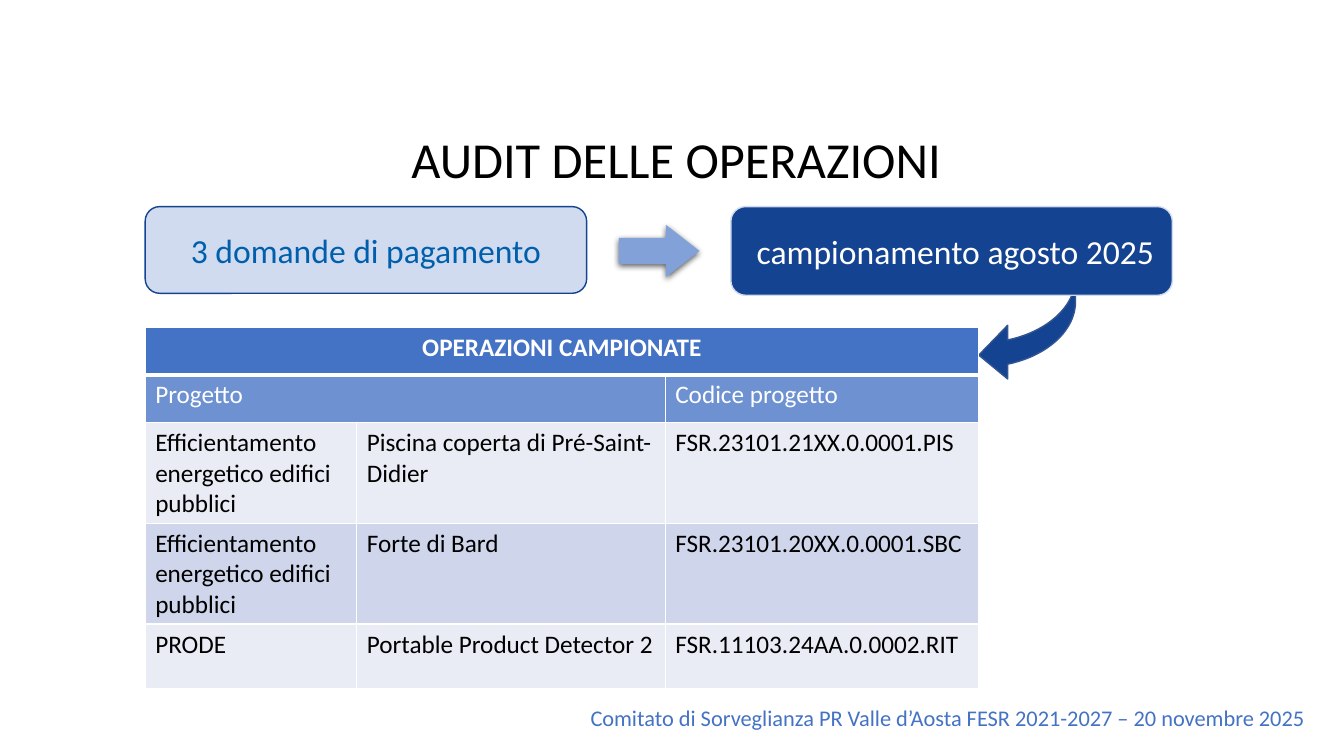
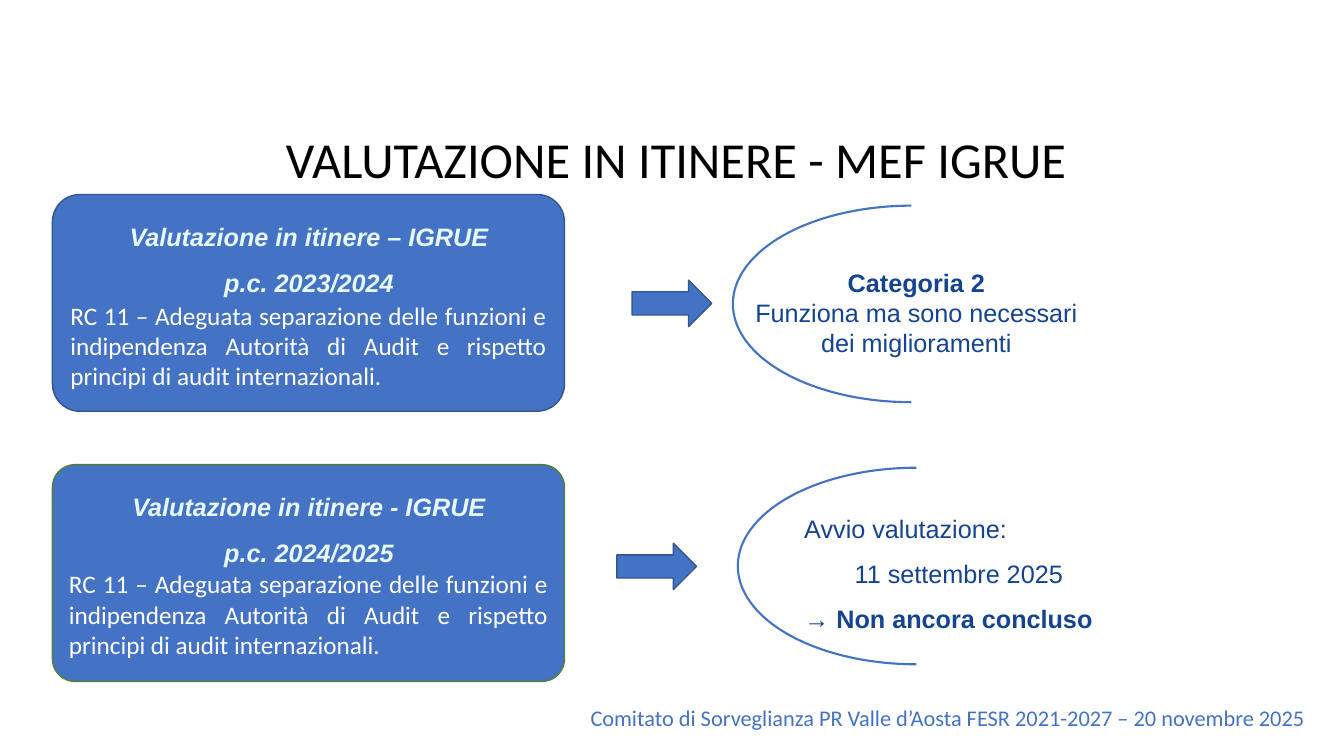
from dataclasses import dataclass

from lxml import etree
from pptx import Presentation
from pptx.dml.color import RGBColor
from pptx.enum.shapes import MSO_SHAPE
from pptx.enum.text import MSO_ANCHOR, PP_ALIGN
from pptx.oxml.ns import qn
from pptx.util import Emu, Inches, Pt

ROUNDED = MSO_SHAPE.ROUNDED_RECTANGLE
RIGHT_ARROW = MSO_SHAPE.RIGHT_ARROW
CURVED_ARROW = MSO_SHAPE.CURVED_LEFT_ARROW
BRACKET = MSO_SHAPE.LEFT_BRACKET
TOP, MIDDLE = MSO_ANCHOR.TOP, MSO_ANCHOR.MIDDLE
LEFT, CENTER, JUSTIFY = PP_ALIGN.LEFT, PP_ALIGN.CENTER, PP_ALIGN.JUSTIFY

WIDTH, HEIGHT = Inches(13.333), Inches(7.5)
COLORS = {
    "blue": "4472C4", "navy": "144391", "outline": "325491", "pale": "D0DBF0",
    "sky": "82A1D8", "link": "005FAC", "ice": "E8F9FE", "green": "538035",
    "subhead": "6D91D1", "band_light": "E9EBF5", "band_dark": "CFD5EA",
    "white": "FFFFFF", "black": "000000",
}
FOOTER = "Comitato di Sorveglianza PR Valle d’Aosta FESR 2021-2027 – 20 novembre 2025"
REQUIREMENT = ("RC 11 – Adeguata separazione delle funzioni e indipendenza Autorità di Audit "
               "e rispetto principi di audit internazionali.")


@dataclass(frozen=True)
class Box:
    """Left and width in percent of slide width, top and height of slide height."""
    left: float
    top: float
    width: float
    height: float

    def emu(self) -> tuple:
        return (share(self.left, WIDTH), share(self.top, HEIGHT),
                share(self.width, WIDTH), share(self.height, HEIGHT))


@dataclass(frozen=True)
class Style:
    size: int = 18
    color: str = "white"
    font: str = "Calibri"
    bold: bool = False
    italic: bool = False


@dataclass(frozen=True)
class Line:
    text: str
    bold: bool = False
    bold_tail: str = ""
    align: PP_ALIGN = CENTER
    spacing: float = 1.0


@dataclass(frozen=True)
class Evaluation:
    top: float
    corner: float
    outline: str
    heading: tuple
    arrow: tuple
    bracket: tuple
    outcome_box: Box
    outcome: list


TITLE_BOX = Box(7.8, 16.27, 85.05, 9.47)
FOOTER_BOX = Box(43.2, 92.53, 55.35, 4.93)
TITLE_STYLE = Style(36, "black")
FOOTER_STYLE = Style(16, "blue")
STEP_TOP, STEP_WIDTH = 27.33, 32.85
HEADING_STYLE = Style(font="Arial", color="ice", bold=True, italic=True)
OUTCOME_STYLE = Style(font="Arial", color="navy")

TABLE_BOX = Box(10.8, 43.33, 62.03, 42.93)
COLUMNS = (15.75, 22.95, 23.33)
ROWS = (6.27, 6.27, 10.93, 10.93, 8.53)
ROW_FILLS = ("blue", "subhead", "band_light", "band_dark", "band_light")
PROJECTS = (
    ("OPERAZIONI CAMPIONATE", "", ""),
    ("Progetto", "", "Codice progetto"),
    ("Efficientamento energetico edifici pubblici", "Piscina coperta di Pré-Saint-Didier",
     "FSR.23101.21XX.0.0001.PIS"),
    ("Efficientamento energetico edifici pubblici", "Forte di Bard",
     "FSR.23101.20XX.0.0001.SBC"),
    ("PRODE", "Portable Product Detector 2", "FSR.11103.24AA.0.0002.RIT"),
)

EVALUATIONS = (
    Evaluation(25.73, 0.126, "outline", ("Valutazione in itinere – IGRUE", "p.c. 2023/2024"),
               (47.03, 37.07), (54.53, 27.2), Box(55.28, 30.67, 25.8, 17.47),
               [Line("Categoria 2", bold=True, spacing=2),
                Line("Funziona ma sono necessari dei miglioramenti")]),
    Evaluation(61.47, 0.104, "green", ("Valutazione in itinere - IGRUE", "p.c. 2024/2025"),
               (45.9, 71.87), (54.9, 61.87), Box(59.1, 65.2, 25.8, 19.47),
               [Line("Avvio valutazione:", align=JUSTIFY, spacing=1.5),
                Line("\t11 settembre 2025", align=JUSTIFY, spacing=1.5),
                Line("→ ", bold_tail="Non ancora concluso", align=JUSTIFY, spacing=1.5)]),
)


def share(percent: float, whole: int) -> Emu:
    return Emu(round(whole * percent / 100))


def rgb(name: str) -> RGBColor:
    return RGBColor.from_string(COLORS[name])


def write(text_frame, lines: list, style: Style) -> None:
    text_frame.word_wrap = True
    for index, line in enumerate(lines):
        paragraph = text_frame.add_paragraph() if index else text_frame.paragraphs[0]
        paragraph.text = line.text
        paragraph.alignment = line.align
        paragraph.line_spacing = line.spacing
        if line.bold_tail:
            paragraph.add_run().text = line.bold_tail
        for position, run in enumerate(paragraph.runs):
            run.font.name = style.font
            run.font.size = Pt(style.size)
            run.font.color.rgb = rgb(style.color)
            run.font.bold = style.bold or line.bold or position > 0
            run.font.italic = style.italic


def add_text(slide, box: Box, lines: list, style: Style) -> None:
    write(slide.shapes.add_textbox(*box.emu()).text_frame, lines, style)


def add_figure(slide, kind: MSO_SHAPE, box: Box, fill: str = "", line: str = "",
               line_width: float = 1, adjustments: tuple = ()):
    shape = slide.shapes.add_shape(kind, *box.emu())
    shape.shadow.inherit = False
    for index, value in enumerate(adjustments):
        shape.adjustments[index] = value
    if fill:
        shape.fill.solid()
        shape.fill.fore_color.rgb = rgb(fill)
    else:
        shape.fill.background()
    if line:
        shape.line.color.rgb = rgb(line)
        shape.line.width = Pt(line_width)
    else:
        shape.line.fill.background()
    return shape


def add_drop_shadow(shape) -> None:
    effects = shape._element.spPr.find(qn("a:effectLst"))
    shadow = etree.SubElement(effects, qn("a:outerShdw"), blurRad=str(Pt(4.5)),
                              dist=str(Pt(1.5)), dir="5400000", rotWithShape="0")
    color = etree.SubElement(shadow, qn("a:srgbClr"), val=COLORS["black"])
    etree.SubElement(color, qn("a:alpha"), val="63000")


def set_borders(cell, top: float, bottom: float) -> None:
    properties = cell._tc.get_or_add_tcPr()
    for side, width in (("L", 1), ("R", 1), ("T", top), ("B", bottom)):
        border = etree.SubElement(properties, qn(f"a:ln{side}"), w=str(Pt(width)))
        fill = etree.SubElement(border, qn("a:solidFill"))
        etree.SubElement(fill, qn("a:srgbClr"), val=COLORS["white"])


def add_projects_table(slide) -> None:
    table = slide.shapes.add_table(len(ROWS), len(COLUMNS), *TABLE_BOX.emu()).table
    for column, width in zip(table.columns, COLUMNS):
        column.width = share(width, WIDTH)
    for row, height in zip(table.rows, ROWS):
        row.height = share(height, HEIGHT)
    for row_index, texts in enumerate(PROJECTS):
        heading = row_index == 0
        style = Style(color="white" if row_index < 2 else "black", bold=heading)
        for column_index, text in enumerate(texts):
            cell = table.cell(row_index, column_index)
            set_borders(cell, 3 if row_index == 1 else 1, 3 if heading else 1)
            cell.fill.solid()
            cell.fill.fore_color.rgb = rgb(ROW_FILLS[row_index])
            if text:
                write(cell.text_frame, [Line(text, align=CENTER if heading else LEFT)], style)
    table.cell(0, 0).merge(table.cell(0, 2))
    table.cell(1, 0).merge(table.cell(1, 1))


def add_base_slide(presentation, title: str):
    slide = presentation.slides.add_slide(presentation.slide_layouts[6])
    add_text(slide, FOOTER_BOX, [Line(FOOTER, align=LEFT)], FOOTER_STYLE)
    add_text(slide, TITLE_BOX, [Line(title)], TITLE_STYLE)
    return slide


def add_step(slide, left: float, height: float, text: str, fill: str, line: str,
             text_color: str) -> None:
    step = add_figure(slide, ROUNDED, Box(left, STEP_TOP, STEP_WIDTH, height), fill, line)
    step.text_frame.vertical_anchor = MIDDLE
    write(step.text_frame, [Line(text)], Style(24, text_color))


def add_evaluation(slide, item: Evaluation) -> None:
    # Requirement card, its text kept below the heading
    card = add_figure(slide, ROUNDED, Box(3.9, item.top, 38.1, 28.67), "blue", item.outline,
                      adjustments=(item.corner,))
    card.text_frame.vertical_anchor = TOP
    card.text_frame.margin_top = share(12.9, HEIGHT)
    write(card.text_frame, [Line(REQUIREMENT, align=JUSTIFY)], Style())
    add_text(slide, Box(5.93, item.top + 0.93, 34.13, 12.67),
             [Line(text, spacing=1.5) for text in item.heading], HEADING_STYLE)
    # Arrow towards the outcome
    add_figure(slide, RIGHT_ARROW, Box(*item.arrow, 5.93, 6.13), "blue", "outline")
    add_figure(slide, BRACKET, Box(*item.bracket, 13.28, 26), line="blue", line_width=1.5,
               adjustments=(0.96,))
    add_text(slide, item.outcome_box, item.outcome, OUTCOME_STYLE)


def main() -> None:
    presentation = Presentation()
    presentation.slide_width, presentation.slide_height = WIDTH, HEIGHT

    # Audit of operations; the curved arrow starts behind the sampling step
    slide = add_base_slide(presentation, "AUDIT DELLE OPERAZIONI")
    add_figure(slide, CURVED_ARROW, Box(72.83, 28, 7.2, 22.53), "navy", "outline",
               adjustments=(0.25, 0.555, 0.299))
    add_step(slide, 54.38, 11.73, " campionamento agosto 2025", "navy", "pale", "white")
    add_step(slide, 10.8, 11.47, "3 domande di pagamento", "pale", "navy", "link")
    add_projects_table(slide)
    add_drop_shadow(add_figure(slide, RIGHT_ARROW, Box(46.05, 29.73, 6, 6.93), "sky",
                               adjustments=(0.5, 0.643)))

    # Ongoing evaluation
    slide = add_base_slide(presentation, "VALUTAZIONE IN ITINERE - MEF IGRUE")
    for item in EVALUATIONS:
        add_evaluation(slide, item)

    presentation.save("out.pptx")


if __name__ == "__main__":
    main()
